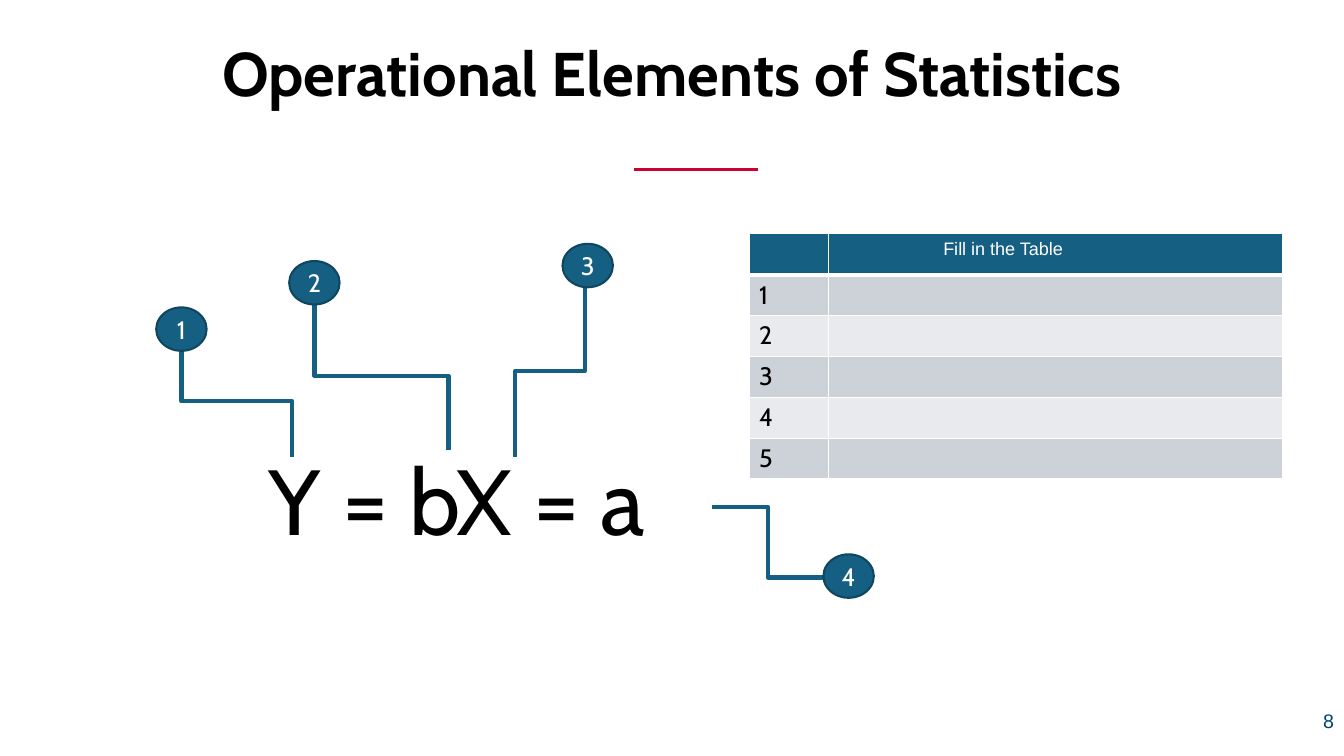
"""Build the slide on the operational elements of statistics."""
from dataclasses import dataclass

from lxml.etree import SubElement
from pptx import Presentation
from pptx.dml.color import RGBColor
from pptx.enum.shapes import MSO_CONNECTOR, MSO_SHAPE
from pptx.enum.text import MSO_ANCHOR, MSO_AUTO_SIZE, PP_ALIGN
from pptx.oxml.ns import qn
from pptx.util import Pt

TEAL, EDGE, RED, NAVY = "156082", "104760", "CC0033", "004474"
BLACK, WHITE = "000000", "FFFFFF"
BANDS = ("E8EAED", "CCD2D8")
BADGE_W, BADGE_H = 36, 31


@dataclass
class Label:
    text: str
    x: float
    y: float
    w: float
    h: float
    color: str
    font: dict
    para: dict
    frame: dict


@dataclass
class Callout:
    number: str
    badge: tuple[float, float]
    start: tuple[float, float]
    end: tuple[float, float]
    upright: bool = True


LABELS = [
    Label("Operational Elements of Statistics", 66.2, 26.6, 828, 56.2, BLACK,
          {"name": "Cabin", "size": Pt(44), "bold": True},
          {"alignment": PP_ALIGN.CENTER, "line_spacing": 0.9},
          {"vertical_anchor": MSO_ANCHOR.MIDDLE}),
    Label("8", 792, 500.4, 168, 28.8, NAVY,
          {"name": "Arial", "size": Pt(14)}, {"alignment": PP_ALIGN.RIGHT},
          {"vertical_anchor": MSO_ANCHOR.MIDDLE}),
    Label("Fill in the Table", 666.7, 170.6, 118, 19.4, WHITE,
          {"name": "Arial", "size": Pt(12.9)}, {"line_spacing": 0.7}, {}),
    Label("Y = bX = a", 185, 313.2, 411, 87, BLACK,
          {"name": "Cabin", "size": Pt(66)}, {},
          {"auto_size": MSO_AUTO_SIZE.SHAPE_TO_FIT_TEXT}),
]
CALLOUTS = [
    Callout("1", (111.6, 219.6), (208.8, 326.2), (129.6, 247)),
    Callout("2", (206.6, 186.5), (320.4, 321.8), (224.6, 215.3)),
    Callout("3", (401.8, 174.2), (367.9, 326.2), (417.6, 203.8)),
    Callout("4", (588.2, 396), (588.2, 412.6), (509, 362.2), upright=False),
]


def rgb(value: str) -> RGBColor:
    return RGBColor.from_string(value)


def apply(target, values: dict) -> None:
    for name, value in values.items():
        setattr(target, name, value)


def write(tf, text: str, color: str, font: dict, para: dict) -> None:
    p = tf.paragraphs[0]
    apply(p, para)
    r = p.add_run()
    r.text = text
    apply(r.font, font)
    r.font.color.rgb = rgb(color)


def add_label(s, label: Label) -> None:
    sp = s.shapes.add_textbox(Pt(label.x), Pt(label.y), Pt(label.w), Pt(label.h))
    tf = sp.text_frame
    tf.word_wrap = True
    apply(tf, label.frame)
    write(tf, label.text, label.color, label.font, label.para)


def add_line(s, kind, start: tuple, end: tuple, color: str, width: float):
    cxn = s.shapes.add_connector(kind, *(Pt(v) for v in (*start, *end)))
    cxn.line.color.rgb = rgb(color)
    cxn.line.width = Pt(width)
    SubElement(cxn._element.spPr, qn("a:effectLst"))
    return cxn


def add_elbow(s, callout: Callout) -> None:
    (x1, y1), (x2, y2) = callout.start, callout.end
    if not callout.upright:
        add_line(s, MSO_CONNECTOR.ELBOW, callout.start, callout.end, TEAL, 3)
        return
    cx, cy = (x1 + x2) / 2, (y1 + y2) / 2
    dx, dy = (x1 - x2) / 2, (y1 - y2) / 2
    cxn = add_line(s, MSO_CONNECTOR.ELBOW, (cx - dy, cy + dx), (cx + dy, cy - dx), TEAL, 3)
    cxn._element.spPr.find(qn("a:xfrm")).set("rot", str(270 * 60000))


def add_badge(s, callout: Callout) -> None:
    x, y = callout.badge
    sp = s.shapes.add_shape(MSO_SHAPE.OVAL, Pt(x), Pt(y), Pt(BADGE_W), Pt(BADGE_H))
    sp.shadow.inherit = False
    sp.fill.solid()
    sp.fill.fore_color.rgb = rgb(TEAL)
    sp.line.color.rgb = rgb(EDGE)
    sp.line.width = Pt(1.5)
    sp.text_frame.vertical_anchor = MSO_ANCHOR.MIDDLE
    write(sp.text_frame, callout.number, WHITE, {"name": "Cabin", "size": Pt(18)},
          {"alignment": PP_ALIGN.CENTER})


def add_borders(cell, widths: dict) -> None:
    pr = cell._tc.get_or_add_tcPr()
    for i, (side, width) in enumerate(widths.items()):
        ln = pr.makeelement(qn(f"a:{side}"), {"w": str(Pt(width))})
        fill = SubElement(ln, qn("a:solidFill"))
        SubElement(fill, qn("a:srgbClr"), val=WHITE)
        pr.insert(i, ln)


def add_answer_table(s) -> None:
    rows, widths, height = 6, (56.9, 324), 29.2
    table = s.shapes.add_table(rows, len(widths), Pt(535), Pt(167),
                               Pt(sum(widths)), Pt(rows * height)).table
    for col, width in zip(table.columns, widths):
        col.width = Pt(width)
    for i, row in enumerate(table.rows):
        row.height = Pt(height)
        for cell in row.cells:
            cell.fill.solid()
            cell.fill.fore_color.rgb = rgb(BANDS[i % 2] if i else TEAL)
            add_borders(cell, {"lnL": 1, "lnR": 1, "lnT": 3 if i == 1 else 1,
                               "lnB": 1 if i else 3})
        if i:
            write(row.cells[0].text_frame, str(i), BLACK,
                  {"name": "Cabin", "size": Pt(18), "bold": False}, {})


def main() -> None:
    prs = Presentation()
    prs.slide_width, prs.slide_height = Pt(960), Pt(540)
    s = prs.slides.add_slide(prs.slide_layouts[6])
    add_line(s, MSO_CONNECTOR.STRAIGHT, (541.4, 121.3), (452.9, 121.3), RED, 2.25)
    add_answer_table(s)
    for label in LABELS:
        add_label(s, label)
    for callout in CALLOUTS:
        add_elbow(s, callout)
        add_badge(s, callout)
    prs.save("out.pptx")


if __name__ == "__main__":
    main()
